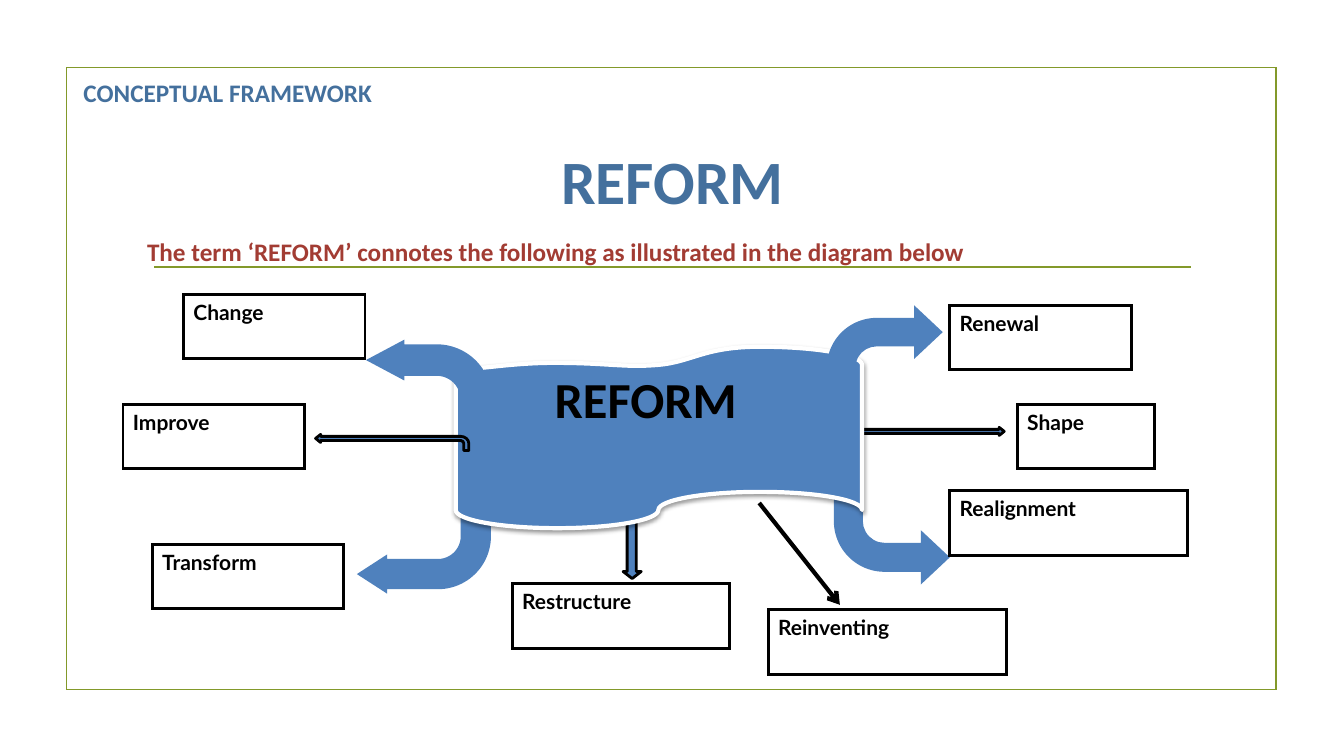
from lxml import etree
from pptx import Presentation
from pptx.dml.color import RGBColor
from pptx.enum import shapes, text
from pptx.oxml import ns
from pptx.util import Emu, Pt

EMU_PER_PX = 9144  # 100 px to the inch
BLUE, TITLE_BLUE, GREEN = "4F81BD", "44709D", "83992A"
RED, BLACK, WHITE = "A23C33", "000000", "FFFFFF"


def px(n):
    return Emu(round(n * EMU_PER_PX))


def rgb(value):
    return RGBColor.from_string(value)


def child(parent, tag, **attrs):
    return etree.SubElement(parent, ns.qn(tag), attrs)


def write(tf, content, size=18, font="Calibri", color=BLACK, align=None,
          anchor=text.MSO_ANCHOR.TOP, after=0, inset_top=5):
    tf.word_wrap = True
    tf.vertical_anchor = anchor
    tf.margin_top = px(inset_top)
    p = tf.paragraphs[0]
    p.alignment = align or text.PP_ALIGN.LEFT
    p.space_after = Pt(after)
    r = p.add_run()
    r.text = content
    r.font.size, r.font.name, r.font.bold = Pt(size), font, True
    r.font.color.rgb = rgb(color)


def bend(sp, parts):
    """Merge the three segments of each six-number part into one curve."""
    segments = iter(list(sp.element.iter(ns.qn("a:lnTo"))))
    for part in parts:
        first = next(segments)
        if len(part) == 6:
            curve = etree.Element(ns.qn("a:cubicBezTo"))
            first.addprevious(curve)
            for segment in (first, next(segments), next(segments)):
                curve.append(segment[0])
                segment.getparent().remove(segment)


class Diagram:
    def __init__(self, slide):
        self.slide = slide
        self.shapes = slide.shapes

    def style(self, sp, fill=None, line=None, width=2):
        sp.shadow.inherit = False
        if fill:
            sp.fill.solid()
            sp.fill.fore_color.rgb = rgb(fill)
        else:
            sp.fill.background()
        if line:
            sp.line.color.rgb = rgb(line)
            sp.line.width = Pt(width)
        else:
            sp.line.fill.background()
        return sp

    def title(self, content, box, **fmt):
        sp = self.shapes.title
        sp.left, sp.top, sp.width, sp.height = map(px, box)
        write(sp.text_frame, content, **fmt)

    def text(self, content, box, **fmt):
        sp = self.shapes.add_textbox(*map(px, box))
        write(sp.text_frame, content, **fmt)

    def rect(self, box, **look):
        sp = self.shapes.add_shape(shapes.MSO_SHAPE.RECTANGLE, *map(px, box))
        self.style(sp, **look)
        child(sp.element.spPr.get_or_add_ln(), "a:miter", lim="800000")
        return sp

    def label(self, content, left, top, width):
        sp = self.rect((left, top, width, 64), fill=WHITE, line=BLACK)
        write(sp.text_frame, content, size=15, font="Lato", after=4)

    def bent_arrow(self, box, adjustments, flip=""):
        sp = self.shapes.add_shape(shapes.MSO_SHAPE.BENT_ARROW, *map(px, box))
        for i, value in enumerate(adjustments):
            sp.adjustments[i] = value
        for axis in flip:
            sp.element.spPr.xfrm.set("flip" + axis, "1")
        self.style(sp, fill=BLUE)

    def outline(self, path, line=BLACK, width=2):
        """Draw a closed path of points and cubic curves (six numbers)."""
        points = [part[i:i + 2] for part in path
                  for i in range(0, len(part), 2)]
        builder = self.shapes.build_freeform(*points[0], scale=EMU_PER_PX)
        builder.add_line_segments(points[1:], close=True)
        sp = builder.convert_to_shape()
        bend(sp, path[1:])
        return self.style(sp, BLUE, line, width)

    def line(self, start, end, color, width, arrow=False):
        cx = self.shapes.add_connector(shapes.MSO_CONNECTOR.STRAIGHT,
                                       *map(px, start + end))
        cx.line.color.rgb = rgb(color)
        cx.line.width = Pt(width)
        if arrow:
            child(cx.element.spPr.get_or_add_ln(), "a:tailEnd", type="arrow")
        child(cx.element.spPr, "a:effectLst")

    def add_shadow(self, sp):
        effects = sp.element.spPr.find(ns.qn("a:effectLst"))
        shadow = child(effects, "a:outerShdw", blurRad=str(Pt(3.1)),
                       dist=str(Pt(1.6)), dir="5400000", rotWithShape="0")
        color = child(shadow, "a:srgbClr", val=BLACK)
        child(color, "a:alpha", val="38000")


SHAPE_ARROW = [
    (844, 440), (844, 433), (844, 429, 848, 426, 852, 426), (991, 426),
    (991, 424), (996, 428), (991, 432), (991, 430), (852, 430),
    (850, 430, 849, 432, 849, 433), (849, 440)]
# The arrow to Improve mirrors the arrow to Shape
IMPROVE_ARROW = [
    tuple(n + 7 if i % 2 else 1309 - n for i, n in enumerate(part))
    for part in SHAPE_ARROW]
RESTRUCTURE_ARROW = [
    (653, 443), (638, 443), (629, 443, 622, 449, 622, 456), (622, 567),
    (618, 567), (627, 574), (636, 567), (631, 567), (631, 456),
    (631, 453, 634, 450, 638, 450), (653, 450)]
FLAG = [
    (452, 362), (452, 372, 494, 360, 549, 360), (605, 360, 619, 365, 653, 362),
    (687, 359, 698, 344, 754, 344), (810, 344, 855, 352, 855, 362), (855, 506),
    (855, 496, 810, 488, 754, 488), (698, 488, 653, 496, 653, 506),
    (653, 516, 608, 524, 553, 524), (497, 524, 452, 516, 452, 506)]
LABELS = [
    ("Change", 182, 292, 180), ("Renewal", 942, 303, 180),
    ("Improve", 122, 401, 180), ("Transform", 151, 540, 190),
    ("Restructure", 508, 579, 216), ("Reinventing", 762, 605, 236),
    ("Realignment", 942, 487, 236), ("Shape", 1009, 401, 136)]


def main():
    prs = Presentation()
    prs.slide_width, prs.slide_height = px(1333), px(750)
    d = Diagram(prs.slides.add_slide(prs.slide_layouts[5]))
    center = text.PP_ALIGN.CENTER

    d.rect((66, 67, 1200, 617), line=GREEN, width=1.25)
    d.line((153, 265), (1181, 265), GREEN, 1.25)
    d.title("REFORM", (142, 107, 1050, 143), size=44, color=TITLE_BLUE,
            align=center, anchor=text.MSO_ANCHOR.MIDDLE)
    d.text("CONCEPTUAL FRAMEWORK", (73, 72, 320, 40), color=TITLE_BLUE)

    d.outline(SHAPE_ARROW)
    d.bent_arrow((354, 469, 133, 120), (0.25, 0.162, 0.25, 0.438), "HV")
    d.outline(RESTRUCTURE_ARROW)
    d.bent_arrow((827, 454, 115, 126), (0.25, 0.235, 0.25, 0.438), "V")
    d.add_shadow(d.outline(FLAG, line=WHITE, width=3))
    d.text("REFORM", (452, 295, 377, 212), size=36, align=center, after=4,
           inset_top=70)
    d.line((753, 499), (833, 600), BLACK, 3, arrow=True)
    d.bent_arrow((820, 303, 115, 113), (0.25, 0.235, 0.25, 0.438))
    d.bent_arrow((363, 337, 125, 140), (0.25, 0.162, 0.304, 0.438), "H")
    d.outline(IMPROVE_ARROW)
    for label in LABELS:
        d.label(*label)
    d.text("The term ‘REFORM’ connotes the following as illustrated "
           "in the diagram below", (136, 230, 875, 40), color=RED)
    prs.save("out.pptx")


if __name__ == "__main__":
    main()
